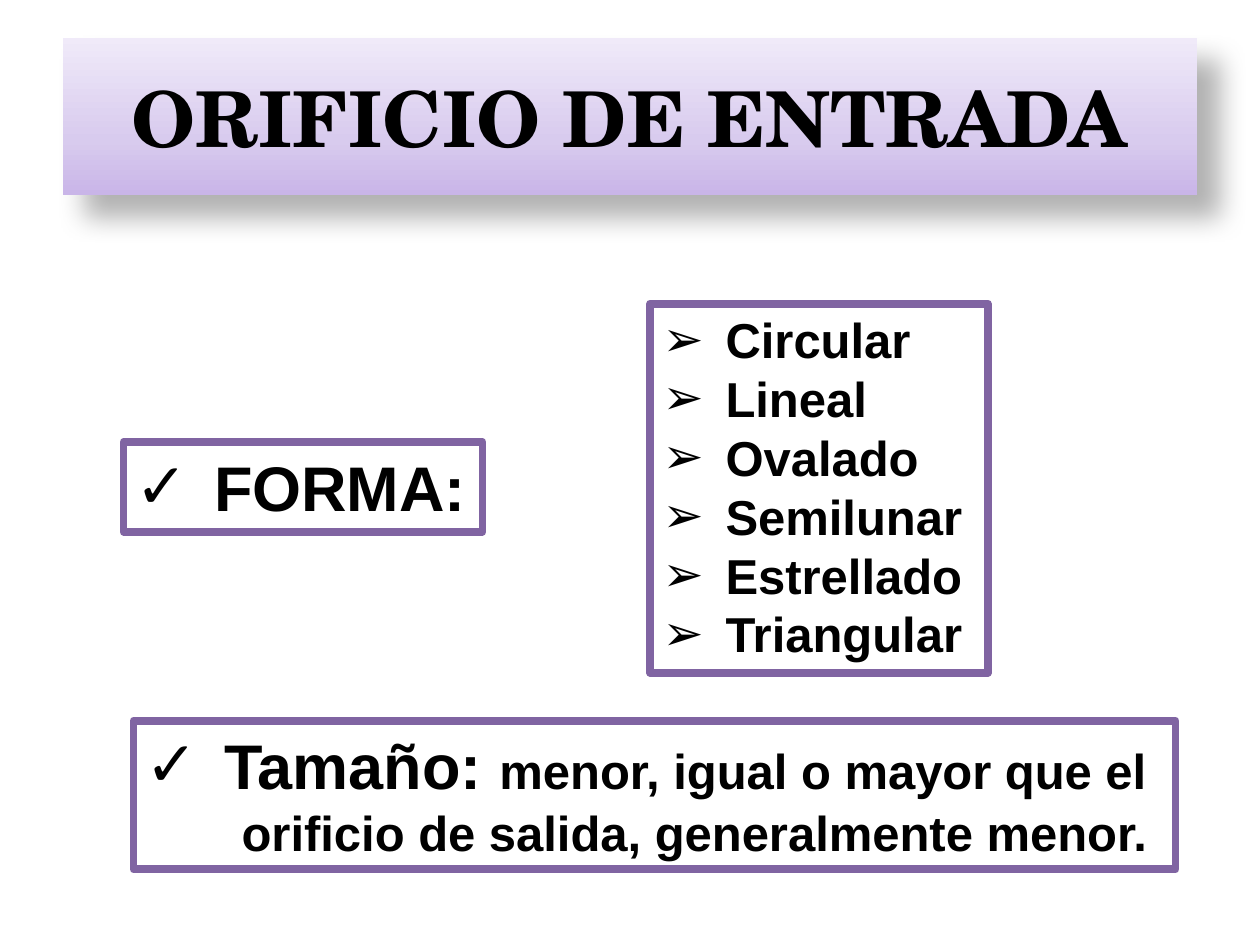
from lxml.etree import SubElement
from pptx import Presentation
from pptx.dml.color import RGBColor
from pptx.enum.text import MSO_ANCHOR, MSO_AUTO_SIZE, PP_ALIGN
from pptx.oxml import parse_xml
from pptx.oxml.ns import nsdecls, qn
from pptx.util import Inches, Pt

BLACK = RGBColor(0x00, 0x00, 0x00)
WHITE = RGBColor(0xFF, 0xFF, 0xFF)
PURPLE = RGBColor(0x80, 0x64, 0xA2)
# Gradient stops from bottom to top: percent and colour
BANNER_STOPS = [(0, RGBColor(0xC9, 0xB5, 0xE8)),
                (35, RGBColor(0xD8, 0xCB, 0xEE)),
                (100, RGBColor(0xF0, 0xEA, 0xF9))]
TITLE_FONT, BODY_FONT = "TeX Gyre Schola", "Arial"
SHAPES = ["Circular", "Lineal", "Ovalado", "Semilunar", "Estrellado", "Triangular"]


def style_run(run, size, font=BODY_FONT):
    run.font.name = font
    run.font.size = Pt(size)
    run.font.bold = True
    run.font.color.rgb = BLACK


def set_indent(paragraph, margin, bullet=None):
    """Set the left margin, with a bullet hanging in it if one is given."""
    props = paragraph._p.get_or_add_pPr()
    props.set("marL", str(Inches(margin)))
    props.set("indent", str(Inches(-margin if bullet else 0)))
    if bullet:
        SubElement(props, qn("a:buFont"), typeface=BODY_FONT)
        SubElement(props, qn("a:buChar"), char=bullet)


def add_banner(slide, left, top, width, height):
    banner = slide.shapes.add_textbox(Inches(left), Inches(top), Inches(width), Inches(height))
    # Three-stop gradient running upwards
    banner.fill.gradient()
    banner.fill.gradient_angle = 90
    props = banner._element.spPr
    stops = props.find(".//" + qn("a:gsLst"))
    for stop in list(stops):
        stops.remove(stop)
    for percent, color in BANNER_STOPS:
        stop = SubElement(stops, qn("a:gs"), pos=str(percent * 1000))
        SubElement(stop, qn("a:srgbClr"), val=str(color))
    banner.line.fill.background()
    # Soft shadow to the lower right
    props.append(parse_xml(
        f'<a:effectLst {nsdecls("a")}><a:outerShdw blurRad="{Pt(15)}" dist="{Pt(18)}" '
        f'dir="2700000" algn="tl" rotWithShape="0"><a:srgbClr val="{BLACK}">'
        '<a:alpha val="30000"/></a:srgbClr></a:outerShdw></a:effectLst>'))
    frame = banner.text_frame
    frame.word_wrap = True
    frame.vertical_anchor = MSO_ANCHOR.MIDDLE
    frame.text = "ORIFICIO DE ENTRADA"
    frame.paragraphs[0].alignment = PP_ALIGN.CENTER
    style_run(frame.paragraphs[0].runs[0], 44, TITLE_FONT)


def add_framed_box(slide, left, top, width, height, wrap=True):
    """Add a white box with a purple frame and return its text frame."""
    box = slide.shapes.add_textbox(Inches(left), Inches(top), Inches(width), Inches(height))
    box.fill.solid()
    box.fill.fore_color.rgb = WHITE
    box.line.color.rgb = PURPLE
    box.line.width = Pt(4.5)
    SubElement(box.line._get_or_add_ln(), qn("a:round"))
    box.text_frame.word_wrap = wrap
    box.text_frame.auto_size = MSO_AUTO_SIZE.SHAPE_TO_FIT_TEXT
    return box.text_frame


def add_form_label(slide, left, top, width, height):
    frame = add_framed_box(slide, left, top, width, height, wrap=False)
    frame.text = "FORMA:"
    set_indent(frame.paragraphs[0], 0.62, "✓")
    style_run(frame.paragraphs[0].runs[0], 36)


def add_shape_list(slide, left, top, width, height):
    frame = add_framed_box(slide, left, top, width, height)
    frame.text = "\n".join(SHAPES)
    for paragraph in frame.paragraphs:
        set_indent(paragraph, 0.5, "➢")
        style_run(paragraph.runs[0], 28)


def add_size_note(slide, left, top, width, height):
    frame = add_framed_box(slide, left, top, width, height)
    frame.text = "Tamaño: \norificio de salida, generalmente menor."
    heading, continuation = frame.paragraphs
    set_indent(heading, 0.62, "✓")
    set_indent(continuation, 0.76)
    style_run(heading.runs[0], 36)
    comparison = heading.add_run()
    comparison.text = "menor, igual o mayor que el"
    style_run(comparison, 28)
    style_run(continuation.runs[0], 28)


def main():
    deck = Presentation()
    deck.slide_width, deck.slide_height = Inches(10), Inches(7.5)
    slide = deck.slides.add_slide(deck.slide_layouts[6])
    add_banner(slide, 0.5, 0.3, 9, 1.25)
    add_form_label(slide, 0.98, 3.51, 2.85, 0.71)
    add_shape_list(slide, 5.16, 2.41, 2.68, 2.93)
    add_size_note(slide, 1.06, 5.72, 8.27, 1.18)
    deck.save("out.pptx")


if __name__ == "__main__":
    main()
